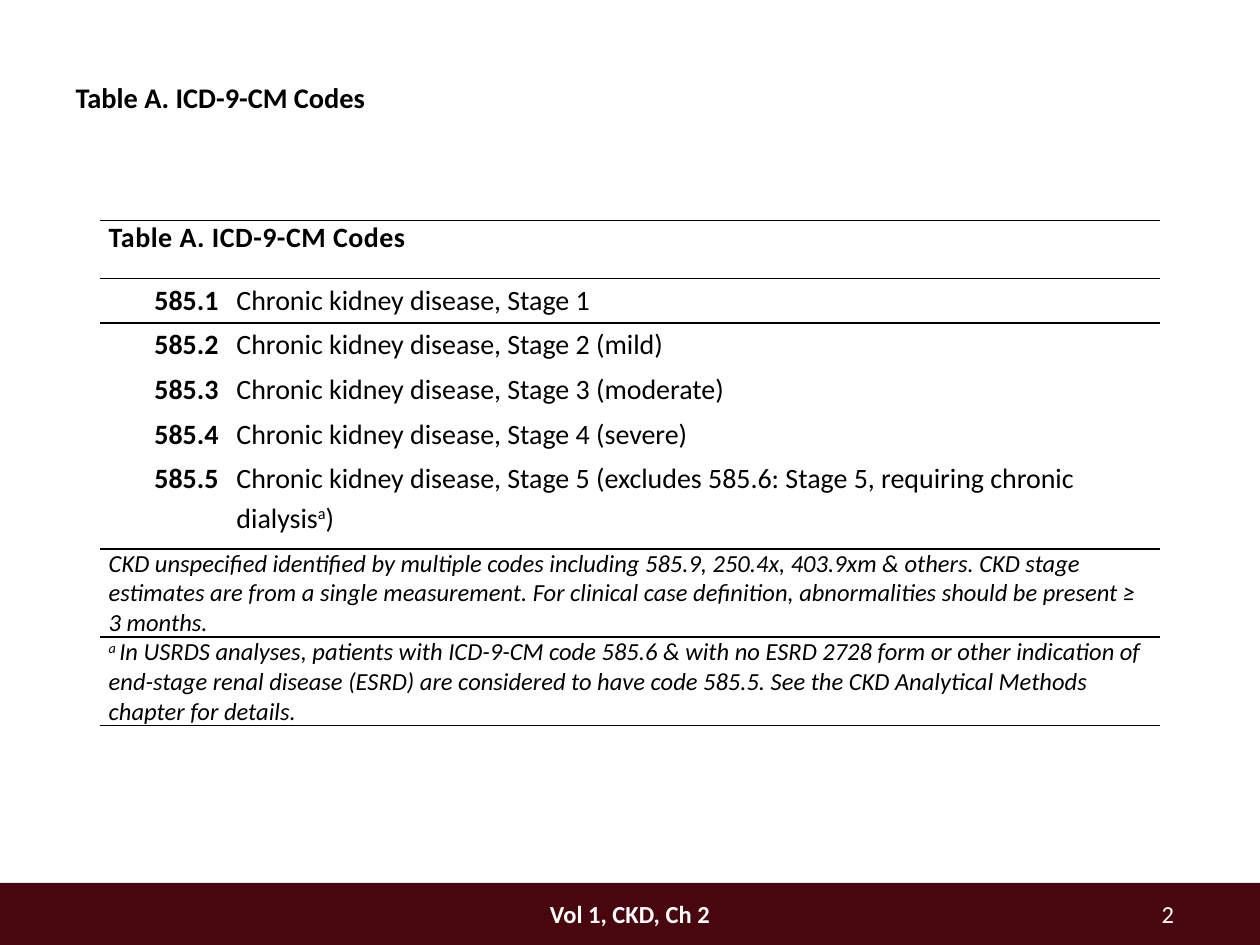
from lxml.etree import SubElement
from pptx import Presentation
from pptx.dml.color import RGBColor
from pptx.enum.shapes import MSO_SHAPE
from pptx.enum.text import MSO_ANCHOR, MSO_AUTO_SIZE, PP_ALIGN
from pptx.oxml import parse_xml
from pptx.oxml.ns import nsdecls, qn
from pptx.util import Pt

BLACK, WHITE, MAROON = "000000", "FFFFFF", "48070E"
NO_STYLE = "{2D5ABB26-0587-4C30-8999-92F81FD0307C}"


def color(value):
    return RGBColor.from_string(value)


def add_span(para, text, size, ink=BLACK, bold=False, italic=False, raised=False):
    span = para.add_run()
    span.text = text
    font = span.font
    font.name, font.size, font.bold, font.italic = "Calibri", Pt(size), bold, italic
    font.color.rgb = color(ink)
    if raised:
        span._r.get_or_add_rPr().set("baseline", "30000")
    return span


deck = Presentation()
deck.slide_width, deck.slide_height = Pt(720), Pt(540)
page = deck.slides.add_slide(deck.slide_layouts[5])

band = page.shapes.add_shape(MSO_SHAPE.RECTANGLE, Pt(0), Pt(504.5), Pt(720), Pt(36))
band.shadow.inherit = False
band.fill.solid()
band.fill.fore_color.rgb = color(MAROON)
band.line.fill.background()

title = page.shapes.title
title.left, title.top, title.width, title.height = Pt(36), Pt(39), Pt(654), Pt(30)
title.text_frame.vertical_anchor = MSO_ANCHOR.TOP
title.text_frame.auto_size = MSO_AUTO_SIZE.SHAPE_TO_FIT_TEXT
para = title.text_frame.paragraphs[0]
para.alignment = PP_ALIGN.LEFT
add_span(para, "Table A. ICD-9-CM Codes", 28, bold=True, raised=True)

footers = [
    ("Vol 1, CKD, Ch 2", 282, 156, PP_ALIGN.CENTER, True),
    ("2", 606, 72, PP_ALIGN.RIGHT, False),
]
for text, left, width, alignment, bold in footers:
    box = page.shapes.add_textbox(Pt(left), Pt(510), Pt(width), Pt(24))
    box.text_frame.word_wrap = True
    para = box.text_frame.paragraphs[0]
    para.alignment = alignment
    add_span(para, text, 14, WHITE, bold)

stages = [
    ("585.1", "Chronic kidney disease, Stage 1"),
    ("585.2", "Chronic kidney disease, Stage 2 (mild)"),
    ("585.3", "Chronic kidney disease, Stage 3 (moderate)"),
    ("585.4", "Chronic kidney disease, Stage 4 (severe)"),
    ("585.5", "Chronic kidney disease, Stage 5 (excludes 585.6: Stage 5, requiring chronic dialysis"),
]
row_heights = [33.2, 25.5, 25.5, 25.5, 25.5, 52.5, 33, 50]
column_widths = [73, 533]
frame = page.shapes.add_table(
    len(row_heights), 2, Pt(57), Pt(126), Pt(sum(column_widths)), Pt(sum(row_heights))
)
table = frame.table
table.first_row = table.horz_banding = False
table._tbl.tblPr.find(qn("a:tableStyleId")).text = NO_STYLE
for column, width in zip(table.columns, column_widths):
    column.width = Pt(width)
for row, height in zip(table.rows, row_heights):
    row.height = Pt(height)
for index in (0, 6, 7):
    table.cell(index, 0).merge(table.cell(index, 1))

ruled_edges = {0: ["lnT", "lnB"], 1: ["lnT"], 5: ["lnB"], 6: ["lnT"], 7: ["lnB"]}
for index, row in enumerate(table.rows):
    for cell in row.cells:
        cell.margin_left = cell.margin_right = Pt(5.14)
        cell.margin_top = cell.margin_bottom = Pt(0)
        cell.vertical_anchor = MSO_ANCHOR.TOP
        for edge in ruled_edges.get(index, []):
            line = parse_xml(f'<a:{edge} {nsdecls("a")} w="{Pt(1)}"/>')
            fill = SubElement(line, qn("a:solidFill"))
            SubElement(fill, qn("a:srgbClr")).set("val", BLACK)
            cell._tc.get_or_add_tcPr().append(line)
        cell.fill.background()

para = table.cell(0, 0).text_frame.paragraphs[0]
para.space_after = Pt(4)
heading = add_span(para, "Table A. ICD-9-CM Codes", 16, bold=True)
heading._r.get_or_add_rPr().set("spc", "30")

for index, (code, description) in enumerate(stages, start=1):
    para = table.cell(index, 0).text_frame.paragraphs[0]
    para.alignment, para.line_spacing = PP_ALIGN.RIGHT, 1.15
    add_span(para, code, 16, bold=True)
    para = table.cell(index, 1).text_frame.paragraphs[0]
    para.line_spacing = 1.15
    add_span(para, description, 16)
add_span(para, "a", 16, raised=True)
add_span(para, ")", 16)

para = table.cell(6, 0).text_frame.paragraphs[0]
add_span(
    para,
    "CKD unspecified identified by multiple codes including 585.9, 250.4x, 403.9xm & others. "
    "CKD stage estimates are from a single measurement. For clinical case definition, "
    "abnormalities should be present ≥ 3 months.",
    14, italic=True,
)
para = table.cell(7, 0).text_frame.paragraphs[0]
add_span(para, "a ", 14, italic=True, raised=True)
add_span(
    para,
    "In USRDS analyses, patients with ICD-9-CM code 585.6 & with no ESRD 2728 form or other "
    "indication of end-stage renal disease (ESRD) are considered to have code 585.5. "
    "See the CKD Analytical Methods chapter for details.",
    14, italic=True,
)

deck.save("out.pptx")
